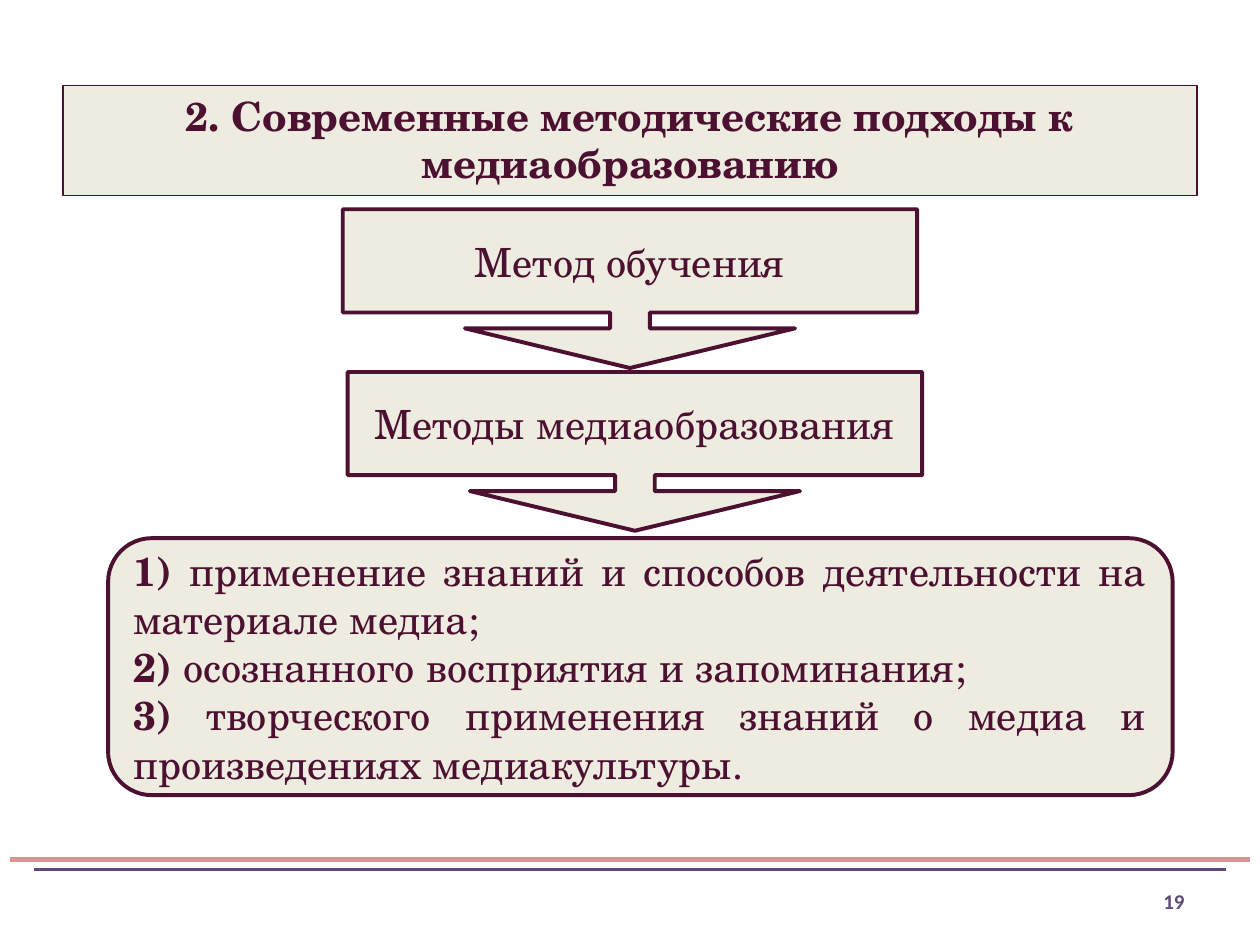
from dataclasses import dataclass

from lxml import etree
from pptx import Presentation
from pptx.dml.color import RGBColor
from pptx.enum.shapes import MSO_CONNECTOR, MSO_SHAPE
from pptx.enum.text import MSO_ANCHOR, PP_ALIGN
from pptx.oxml.ns import qn
from pptx.util import Cm, Pt

RECTANGLE = MSO_SHAPE.RECTANGLE
CALLOUT = MSO_SHAPE.DOWN_ARROW_CALLOUT
ROUNDED = MSO_SHAPE.ROUNDED_RECTANGLE
STRAIGHT = MSO_CONNECTOR.STRAIGHT
MIDDLE = MSO_ANCHOR.MIDDLE
CENTER, RIGHT, JUSTIFY = PP_ALIGN.CENTER, PP_ALIGN.RIGHT, PP_ALIGN.JUSTIFY


@dataclass(frozen=True)
class Theme:
    ink: str = "4C1130"
    panel: str = "EEECE1"
    rose: str = "D99593"
    violet: str = "5F497A"
    body_font: str = "TeX Gyre Schola"
    number_font: str = "Calibri"
    body_size: float = 23
    number_size: float = 12


THEME = Theme()
SLIDE_WIDTH, SLIDE_HEIGHT = 25.4, 19.05

TITLE = "2. Современные методические подходы к медиаобразованию"
STEPS = ["Метод обучения", "Методы медиаобразования"]
METHODS = [
    ("1)", " применение знаний и способов деятельности на материале медиа;"),
    ("2)", " осознанного восприятия и запоминания;"),
    ("3)", " творческого применения знаний о медиа и произведениях медиакультуры."),
]
PAGE_NUMBER = "19"

TITLE_PLACE = (1.27, 1.73, 22.86, 2.21)
METHODS_PLACE = (2.18, 10.85, 21.46, 5.18)
NUMBER_PLACE = (22.5, 17.65, 1.63, 1.02)
STEP_LEFT, STEP_TOP, STEP_WIDTH, STEP_HEIGHT = 6.91, 4.22, 11.58, 3.2
STEP_SHIFT, STEP_PITCH = 0.1, 3.28
STEP_ADJUSTMENTS = [0.25, 1.04, 0.25, 0.65]
FOOTER_RULES = [
    (0.2, 17.32, THEME.rose, 3),
    (0.69, 17.53, THEME.violet, 2),
]


def write_text(box, paragraphs, align=CENTER, font=THEME.body_font,
               size=THEME.body_size, color=THEME.ink, inset=0.25,
               spacing=None):
    frame = box.text_frame
    frame.word_wrap = True
    frame.vertical_anchor = MIDDLE
    frame.margin_left = frame.margin_right = Cm(0.25)
    frame.margin_top = frame.margin_bottom = Cm(inset)
    for index, spans in enumerate(paragraphs):
        para = frame.paragraphs[0] if index == 0 else frame.add_paragraph()
        para.alignment = align
        if spacing:
            para.line_spacing = spacing
        for text, bold in spans:
            span = para.add_run()
            span.text = text
            span.font.name = font
            span.font.size = Pt(size)
            span.font.bold = bold
            span.font.color.rgb = RGBColor.from_string(color)


def add_panel(page, kind, place, line_width, adjustments=()):
    panel = page.shapes.add_shape(kind, *map(Cm, place))
    panel.shadow.inherit = False
    panel.fill.solid()
    panel.fill.fore_color.rgb = RGBColor.from_string(THEME.panel)
    panel.line.color.rgb = RGBColor.from_string(THEME.ink)
    panel.line.width = Pt(line_width)
    for index, value in enumerate(adjustments):
        panel.adjustments[index] = value
    return panel


def add_rule(page, margin, top, color, width):
    rule = page.shapes.add_connector(
        STRAIGHT, Cm(margin), Cm(top), Cm(SLIDE_WIDTH - margin), Cm(top))
    rule.line.color.rgb = RGBColor.from_string(color)
    rule.line.width = Pt(width)
    etree.SubElement(rule._element.spPr, qn("a:effectLst"))


def main():
    deck = Presentation()
    deck.slide_width, deck.slide_height = Cm(SLIDE_WIDTH), Cm(SLIDE_HEIGHT)
    page = deck.slides.add_slide(deck.slide_layouts[6])

    for rule in FOOTER_RULES:
        add_rule(page, *rule)

    title = add_panel(page, RECTANGLE, TITLE_PLACE, 0.75)
    write_text(title, [[(TITLE, True)]], inset=0.13, spacing=0.97)

    number = page.shapes.add_textbox(*map(Cm, NUMBER_PLACE))
    write_text(number, [[(PAGE_NUMBER, True)]], align=RIGHT,
               font=THEME.number_font, size=THEME.number_size,
               color=THEME.violet, inset=0.13)

    for index, step in enumerate(STEPS):
        place = (STEP_LEFT + index * STEP_SHIFT,
                 STEP_TOP + index * STEP_PITCH, STEP_WIDTH, STEP_HEIGHT)
        callout = add_panel(page, CALLOUT, place, 2.25, STEP_ADJUSTMENTS)
        write_text(callout, [[(step, False)]])

    methods = add_panel(page, ROUNDED, METHODS_PLACE, 2.25, [0.17])
    write_text(methods, [[(mark, True), (text, False)]
                         for mark, text in METHODS], align=JUSTIFY)

    deck.save("out.pptx")


if __name__ == "__main__":
    main()
